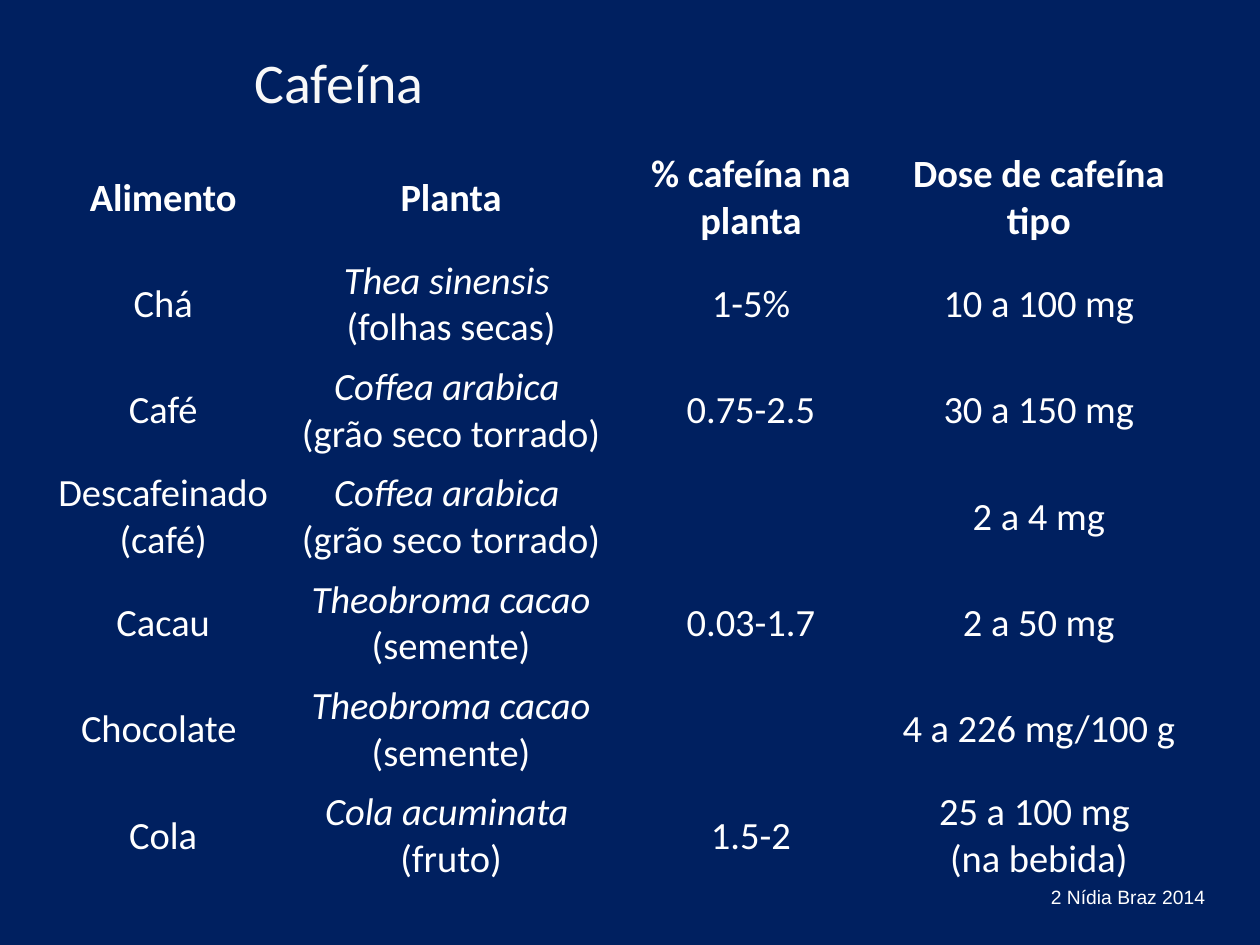
from pptx import Presentation
from pptx.dml.color import RGBColor
from pptx.enum.text import MSO_ANCHOR as Anchor, PP_ALIGN as Align
from pptx.oxml.ns import qn
from pptx.util import Inches, Pt

COLORS = {"background": "002060", "title": "F8F8F8", "text": "FFFFFF"}
NO_STYLE_NO_GRID = "{2D5ABB26-0587-4C30-8999-92F81FD0307C}"

TITLE = "Cafeína"
FOOTER = "2 Nídia Braz 2014 "
HEADERS = ["Alimento", "Planta", "% cafeína na planta", "Dose de cafeína tipo"]
# Each line break inside a cell starts a new paragraph.
FOODS = [
    ("Chá", "Thea sinensis \n(folhas secas)", "1-5%", "10 a 100 mg"),
    ("Café", "Coffea arabica \n(grão seco torrado)", "0.75-2.5", "30 a 150 mg"),
    ("Descafeinado\n(café)", "Coffea arabica \n(grão seco torrado)", "", "2 a 4 mg"),
    ("Cacau", "Theobroma cacao\n(semente)", "0.03-1.7", "2 a 50 mg"),
    ("Chocolate ", "Theobroma cacao\n(semente)", "", "4 a 226 mg/100 g"),
    ("Cola", "Cola acuminata \n(fruto)", "1.5-2", "25 a 100 mg \n(na bebida)"),
]
COLUMN_WIDTHS = [1.89, 2.68, 2.08, 2.49]
PLANT_COLUMN = 1


def rgb(name):
    return RGBColor.from_string(COLORS[name])


def format_para(para, size, font="Calibri", color="text", bold=False, italic=False):
    para.alignment = Align.CENTER
    para.font.name = font
    para.font.size = Pt(size)
    para.font.color.rgb = rgb(color)
    para.font.bold = bold
    para.font.italic = italic


def add_title(slide):
    title = slide.shapes.title
    title.left, title.top = Inches(-0.67), Inches(0.3)
    title.width, title.height = Inches(6.72), Inches(0.69)
    title.text_frame.text = TITLE
    title.text_frame.vertical_anchor = Anchor.MIDDLE
    format_para(title.text_frame.paragraphs[0], 32, color="title")


def add_food_table(slide):
    rows = [HEADERS, *FOODS]
    frame = slide.shapes.add_table(
        len(rows), len(HEADERS),
        Inches(0.35), Inches(1.15), Inches(sum(COLUMN_WIDTHS)), Inches(5.83))
    table = frame.table
    table.first_row = table.horz_banding = False
    table._tbl.tblPr.find(qn("a:tableStyleId")).text = NO_STYLE_NO_GRID
    for column, width in zip(table.columns, COLUMN_WIDTHS):
        column.width = Inches(width)

    for row_index, row in enumerate(rows):
        is_header = row_index == 0
        for column_index, text in enumerate(row):
            cell = table.cell(row_index, column_index)
            cell.text = text
            cell.vertical_anchor = Anchor.MIDDLE
            cell.fill.background()
            for line, para in enumerate(cell.text_frame.paragraphs):
                is_species = column_index == PLANT_COLUMN and line == 0 and not is_header
                format_para(para, 22, bold=is_header, italic=is_species)


def add_footer(slide):
    box = slide.shapes.add_textbox(Inches(8.15), Inches(6.98), Inches(1.65), Inches(0.29))
    box.text_frame.word_wrap = True
    box.text_frame.text = FOOTER
    format_para(box.text_frame.paragraphs[0], 11, font="Arial")


def main():
    deck = Presentation()
    deck.slide_width, deck.slide_height = Inches(10), Inches(7.5)
    slide = deck.slides.add_slide(deck.slide_layouts.get_by_name("Title Only"))
    slide.background.fill.solid()
    slide.background.fill.fore_color.rgb = rgb("background")
    add_title(slide)
    add_food_table(slide)
    add_footer(slide)
    deck.save("out.pptx")


if __name__ == "__main__":
    main()
